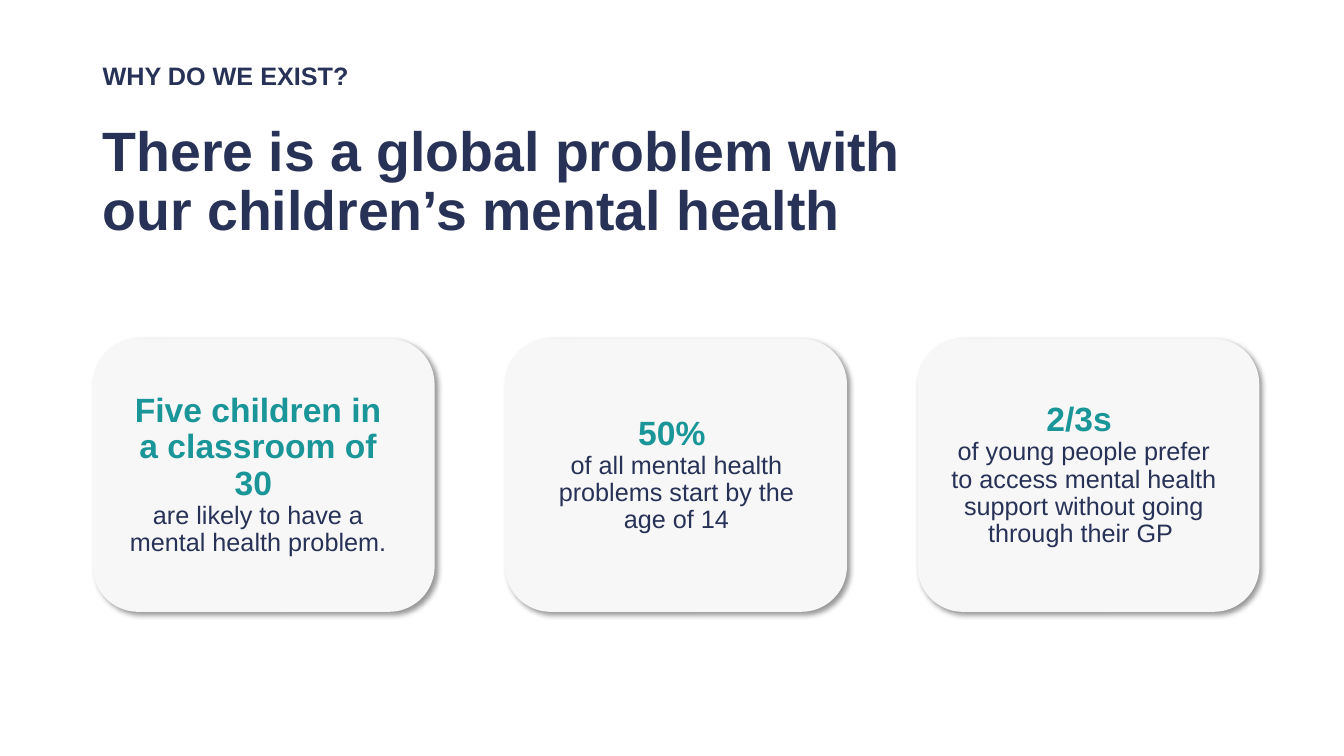
from pptx import Presentation
from pptx.dml.color import RGBColor
from pptx.enum.shapes import MSO_SHAPE
from pptx.enum.text import MSO_ANCHOR, PP_ALIGN
from pptx.oxml import parse_xml
from pptx.oxml.ns import nsdecls
from pptx.util import Inches, Pt

NAVY = RGBColor(0x27, 0x32, 0x56)
TEAL = RGBColor(0x1A, 0x96, 0x99)
CARD_GREY = RGBColor(0xF7, 0xF7, 0xF7)

SHADOW = (
    f'<a:effectLst {nsdecls("a")}>'
    '<a:outerShdw blurRad="50800" dist="38100" dir="2700000" algn="tl" rotWithShape="0">'
    '<a:srgbClr val="000000"><a:alpha val="40000"/></a:srgbClr>'
    '</a:outerShdw></a:effectLst>'
)


def add_text(tf, text, size, color=NAVY, bold=False, align=PP_ALIGN.LEFT, new=False):
    tf.word_wrap = True
    tf.vertical_anchor = MSO_ANCHOR.MIDDLE
    p = tf.add_paragraph() if new else tf.paragraphs[0]
    p.alignment = align
    p.line_spacing = 0.9
    r = p.add_run()
    r.text = text
    r.font.name = "Arial"
    r.font.size = Pt(size)
    r.font.bold = bold
    r.font.color.rgb = color


prs = Presentation()
prs.slide_width = Inches(13.33)
prs.slide_height = Inches(7.5)
s = prs.slides.add_slide(prs.slide_layouts[6])

title = s.shapes.add_textbox(Inches(0.92), Inches(1.09), Inches(8.19), Inches(1.45))
add_text(title.text_frame, "There is a global problem with our children’s mental health", 39.6, bold=True)

kicker = s.shapes.add_textbox(Inches(0.92), Inches(0.44), Inches(11.5), Inches(0.65))
add_text(kicker.text_frame, "WHY DO WE EXIST?", 18, bold=True)

cards = [
    (1.13, "Five children in a classroom of 30 ", "are likely to have a mental health problem."),
    (5.28, "50% ", "of all mental health problems start by the age of 14"),
    (9.32, "2/3s ", "of young people prefer to access mental health support without going through their GP "),
]
for i, (text_left, figure, detail) in enumerate(cards):
    sp = s.shapes.add_shape(
        MSO_SHAPE.ROUNDED_RECTANGLE,
        Inches(0.92 + 4.09 * i), Inches(3.36), Inches(3.39), Inches(2.71),
    )
    sp.fill.solid()
    sp.fill.fore_color.rgb = CARD_GREY
    sp.line.fill.background()
    sp._element.spPr.append(parse_xml(SHADOW))

    tf = s.shapes.add_textbox(Inches(text_left), Inches(3.99), Inches(2.86), Inches(1.45)).text_frame
    add_text(tf, figure, 24, color=TEAL, bold=True, align=PP_ALIGN.CENTER)
    add_text(tf, detail, 18, align=PP_ALIGN.CENTER, new=True)

prs.save("out.pptx")
